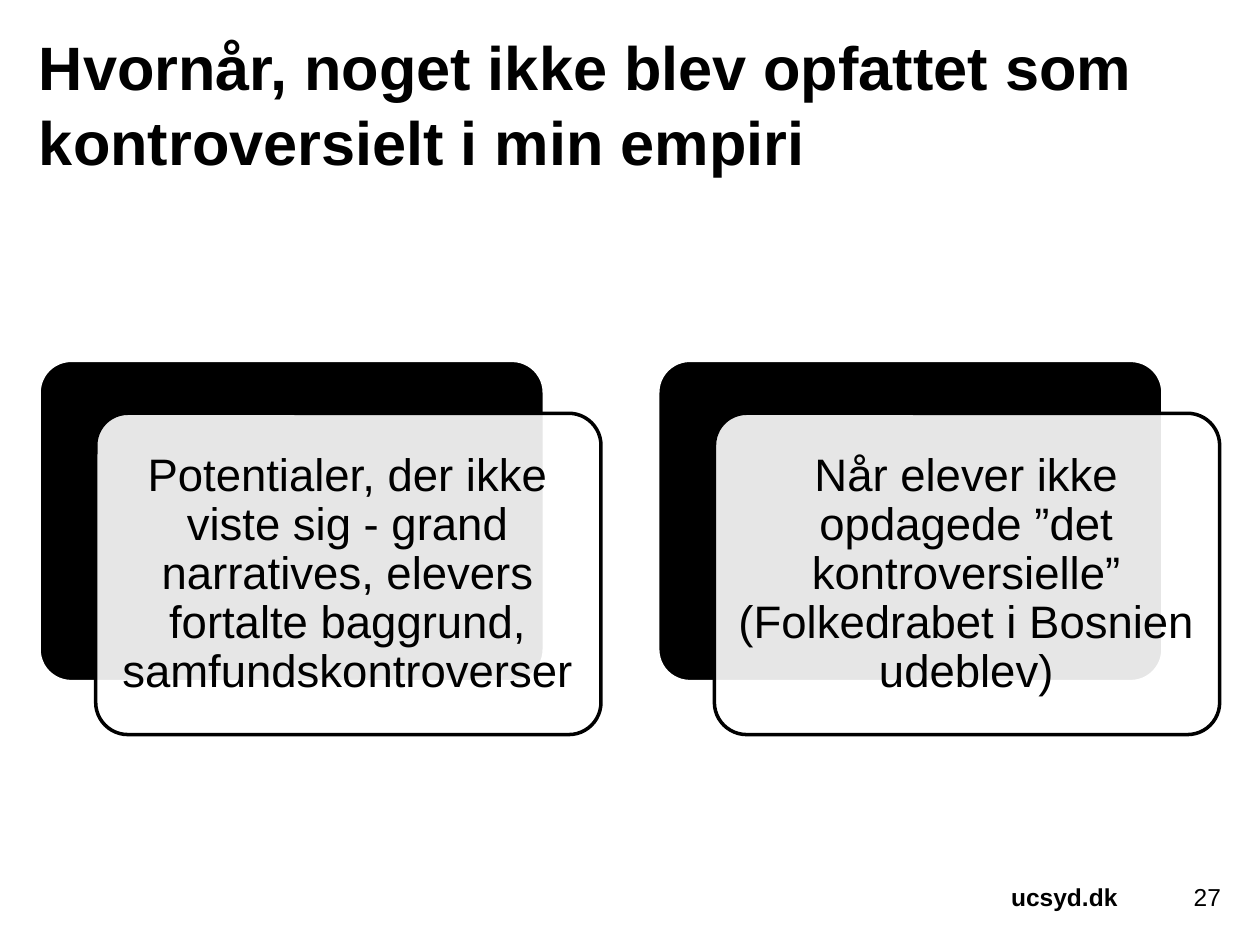
from lxml.etree import SubElement
from pptx import Presentation
from pptx.dml.color import RGBColor
from pptx.enum.shapes import MSO_SHAPE
from pptx.enum.text import MSO_ANCHOR, PP_ALIGN
from pptx.oxml.ns import qn
from pptx.util import Inches, Pt

COLORS = {"ink": "000000", "paper": "FFFFFF"}

deck = Presentation()
deck.slide_width, deck.slide_height = Inches(10), Inches(7.5)
slide = deck.slides.add_slide(deck.slide_layouts[6])


def add_text(words, left, top, width, height, size, bold=False,
             align=PP_ALIGN.LEFT, anchor=MSO_ANCHOR.TOP, inset=0, spacing=1.0):
    box = slide.shapes.add_textbox(
        Inches(left), Inches(top), Inches(width), Inches(height))
    frame = box.text_frame
    frame.word_wrap = True
    frame.vertical_anchor = anchor
    frame.margin_left = frame.margin_right = Inches(inset)
    frame.margin_top = frame.margin_bottom = Inches(inset)
    para = frame.paragraphs[0]
    para.alignment = align
    para.line_spacing = spacing
    run = para.add_run()
    run.text = words
    run.font.name = "Arial"
    run.font.size = Pt(size)
    run.font.bold = bold
    run.font.color.rgb = RGBColor.from_string(COLORS["ink"])


def add_panel(left, top, fill, line):
    panel = slide.shapes.add_shape(
        MSO_SHAPE.ROUNDED_RECTANGLE,
        Inches(left), Inches(top), Inches(4.01), Inches(2.55))
    panel.adjustments[0] = 0.1
    panel.shadow.inherit = False
    panel.fill.solid()
    panel.fill.fore_color.rgb = RGBColor.from_string(COLORS[fill])
    panel.line.color.rgb = RGBColor.from_string(COLORS[line])
    panel.line.width = Pt(2)
    return panel


add_text("Hvornår, noget ikke blev opfattet som kontroversielt i min empiri",
         0.31, 0.22, 9.37, 1.34, 35, bold=True, spacing=1.02)

cards = [
    "Potentialer, der ikke viste sig - grand narratives, elevers "
    "fortalte baggrund, samfundskontroverser",
    "Når elever ikke opdagede ”det kontroversielle” "
    "(Folkedrabet i Bosnien udeblev)",
]
for i, words in enumerate(cards):
    left = 0.31 + i * 4.91
    add_panel(left, 2.86, "ink", "paper")
    front = add_panel(left + 0.45, 3.28, "paper", "ink")
    color = front.fill._xPr.find(qn("a:solidFill"))[0]
    SubElement(color, qn("a:alpha"), val="90000")
    add_text(words, left + 0.52, 3.36, 3.86, 2.4, 26, align=PP_ALIGN.CENTER,
             anchor=MSO_ANCHOR.MIDDLE, inset=0.11, spacing=0.9)

add_text("ucsyd.dk", 7.3, 7, 1.57, 0.23, 14, bold=True,
         align=PP_ALIGN.RIGHT, anchor=MSO_ANCHOR.BOTTOM)
add_text("27", 9.17, 6.99, 0.52, 0.24, 14,
         align=PP_ALIGN.RIGHT, anchor=MSO_ANCHOR.BOTTOM)

deck.save("out.pptx")
